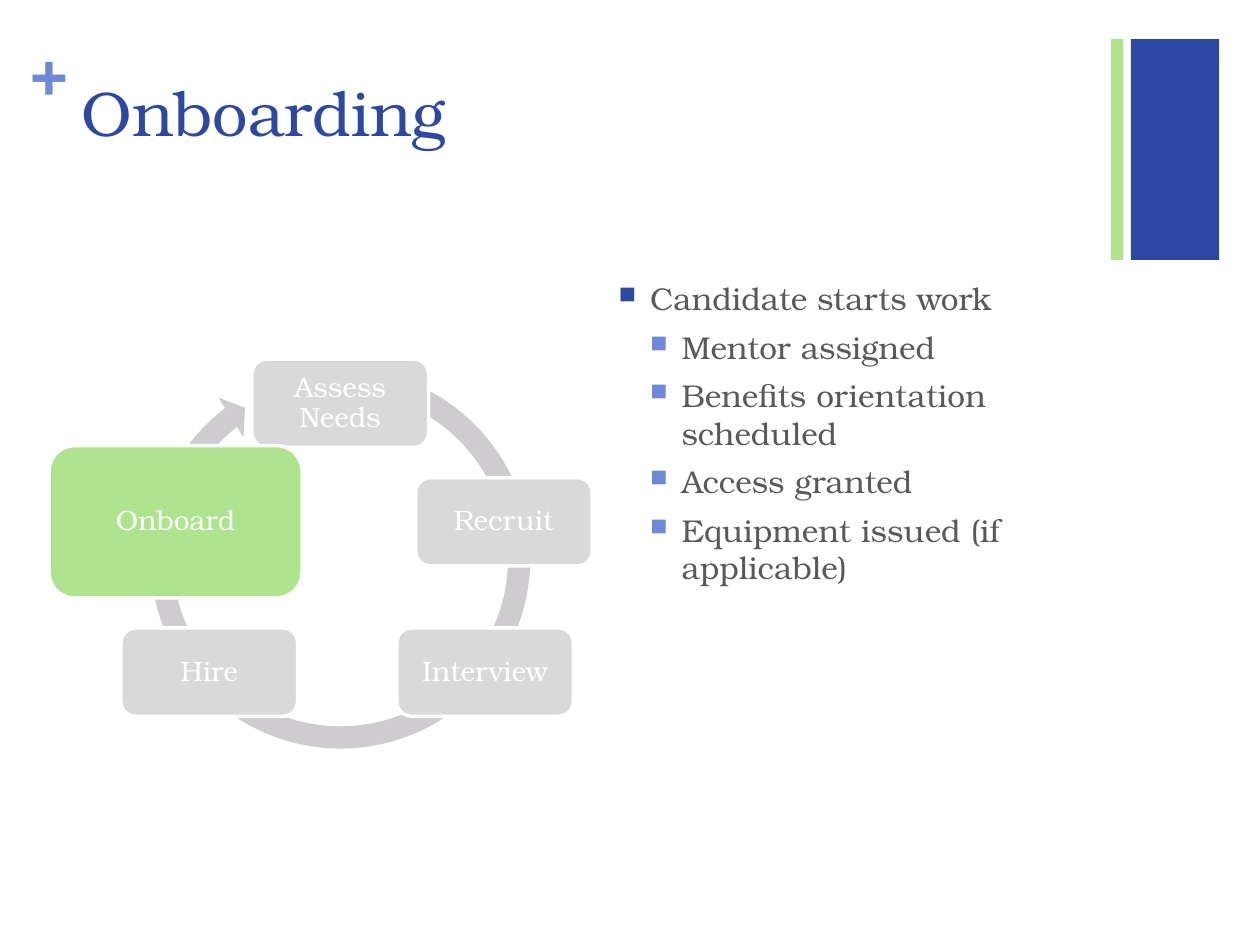
from lxml.etree import SubElement
from pptx import Presentation
from pptx.dml.color import RGBColor
from pptx.enum.shapes import MSO_SHAPE as Shape
from pptx.enum.text import MSO_ANCHOR as Anchor, PP_ALIGN as Align
from pptx.oxml.ns import qn
from pptx.util import Cm, Pt

FONT = "TeX Gyre Bonum"
COLORS = {
    "blue": "2C48A2",
    "light_blue": "7088D8",
    "green": "AEE48E",
    "text": "595959",
    "node": "D9D9D9",
    "ring": "CECCCF",
    "white": "FFFFFF",
}
BULLETS = [
    (0, "Candidate starts work"),
    (1, "Mentor assigned"),
    (1, "Benefits orientation scheduled"),
    (1, "Access granted"),
    (1, "Equipment issued (if applicable)"),
]
NODE_SIZE = (3.56, 1.78)
ACTIVE_SIZE = (5.1, 3.07)
# Label, centre relative to the cycle's box, size, colour
STEPS = [
    ("Assess Needs", 5.87, 0.94, NODE_SIZE, "node"),
    ("Recruit", 9.17, 3.33, NODE_SIZE, "node"),
    ("Interview", 8.79, 6.36, NODE_SIZE, "node"),
    ("Hire", 3.23, 6.36, NODE_SIZE, "node"),
    ("Onboard", 2.55, 3.33, ACTIVE_SIZE, "green"),
]


def rgb(name):
    return RGBColor.from_string(COLORS[name])


def add_filled(slide, kind, left, top, width, height, color, line=None):
    shape = slide.shapes.add_shape(kind, Cm(left), Cm(top), Cm(width), Cm(height))
    shape.shadow.inherit = False
    shape.fill.solid()
    shape.fill.fore_color.rgb = rgb(color)
    if line:
        shape.line.color.rgb = rgb(line)
        shape.line.width = Pt(2)
    else:
        shape.line.fill.background()
    return shape


def add_textbox(slide, left, top, width, height):
    box = slide.shapes.add_textbox(Cm(left), Cm(top), Cm(width), Cm(height))
    box.text_frame.word_wrap = True
    return box.text_frame


def set_margins(frame, margin):
    frame.margin_left = frame.margin_right = Cm(margin)
    frame.margin_top = frame.margin_bottom = Cm(margin)


def write(paragraph, text, size=18, color="text", bold=False,
          align=Align.LEFT, before=0, spacing=None):
    paragraph.alignment = align
    paragraph.space_before = Pt(before)
    if spacing:
        paragraph.line_spacing = spacing
    run = paragraph.add_run()
    run.text = text
    run.font.name = FONT
    run.font.size = Pt(size)
    run.font.bold = bold
    run.font.color.rgb = rgb(color)


def add_bullet(paragraph, level, color):
    properties = paragraph._p.get_or_add_pPr()
    properties.set("marL", str(Cm(0.635 * (level + 1))))
    properties.set("indent", str(-Cm(0.635)))
    bullet_color = SubElement(properties, qn("a:buClr"))
    SubElement(bullet_color, qn("a:srgbClr"), val=COLORS[color])
    SubElement(properties, qn("a:buSzPct"), val="75000")
    SubElement(properties, qn("a:buChar"), char="■")


def add_corner_bars(slide, left, top, height):
    add_filled(slide, Shape.RECTANGLE, left + 0.4, top, 1.78, height, "blue")
    add_filled(slide, Shape.RECTANGLE, left, top, 0.25, height, "green")


def add_heading(slide, left, top, width, height):
    # Plus sign to the upper left of the title
    frame = add_textbox(slide, left, top, 0.74, 1.55)
    set_margins(frame, 0)
    write(frame.paragraphs[0], "+", size=36, color="light_blue", bold=True)

    frame = add_textbox(slide, left + 0.79, top + 0.71, width - 0.79, height - 0.71)
    write(frame.paragraphs[0], "Onboarding", size=36, color="blue")


def add_bullet_list(slide, left, top, width, height):
    frame = add_textbox(slide, left, top, width, height)
    for index, (level, text) in enumerate(BULLETS):
        paragraph = frame.add_paragraph() if index else frame.paragraphs[0]
        paragraph.level = level
        write(paragraph, text, before=6 if level else 20)
        add_bullet(paragraph, level, "light_blue" if level else "blue")


def add_cycle(slide, left, top):
    # Ring with arrowhead behind the steps
    ring = add_filled(slide, Shape.CIRCULAR_ARROW,
                      left + 1.8, top, 8.15, 8.15, "ring")
    for index, value in enumerate((0.055, 3.307, 139.325, 172.914, 0.058)):
        ring.adjustments[index] = value

    # Steps
    for label, center_x, center_y, (width, height), color in STEPS:
        node = add_filled(slide, Shape.ROUNDED_RECTANGLE,
                          left + center_x - width / 2, top + center_y - height / 2,
                          width, height, color, line="white")
        frame = node.text_frame
        frame.word_wrap = True
        frame.vertical_anchor = Anchor.MIDDLE
        set_margins(frame, 0.18)
        write(frame.paragraphs[0], label, size=16, color="white",
              align=Align.CENTER, spacing=0.9)


def main():
    presentation = Presentation()
    presentation.slide_width = Cm(25.4)
    presentation.slide_height = Cm(19.05)
    slide = presentation.slides.add_slide(presentation.slide_layouts[6])

    add_corner_bars(slide, left=22.4, top=0.79, height=4.45)
    add_heading(slide, left=0.61, top=0.64, width=21.77, height=3.81)
    add_bullet_list(slide, left=12.22, top=5.51, width=10.16, height=11.51)
    add_cycle(slide, left=0.99, top=7.19)

    presentation.save("out.pptx")


if __name__ == "__main__":
    main()
